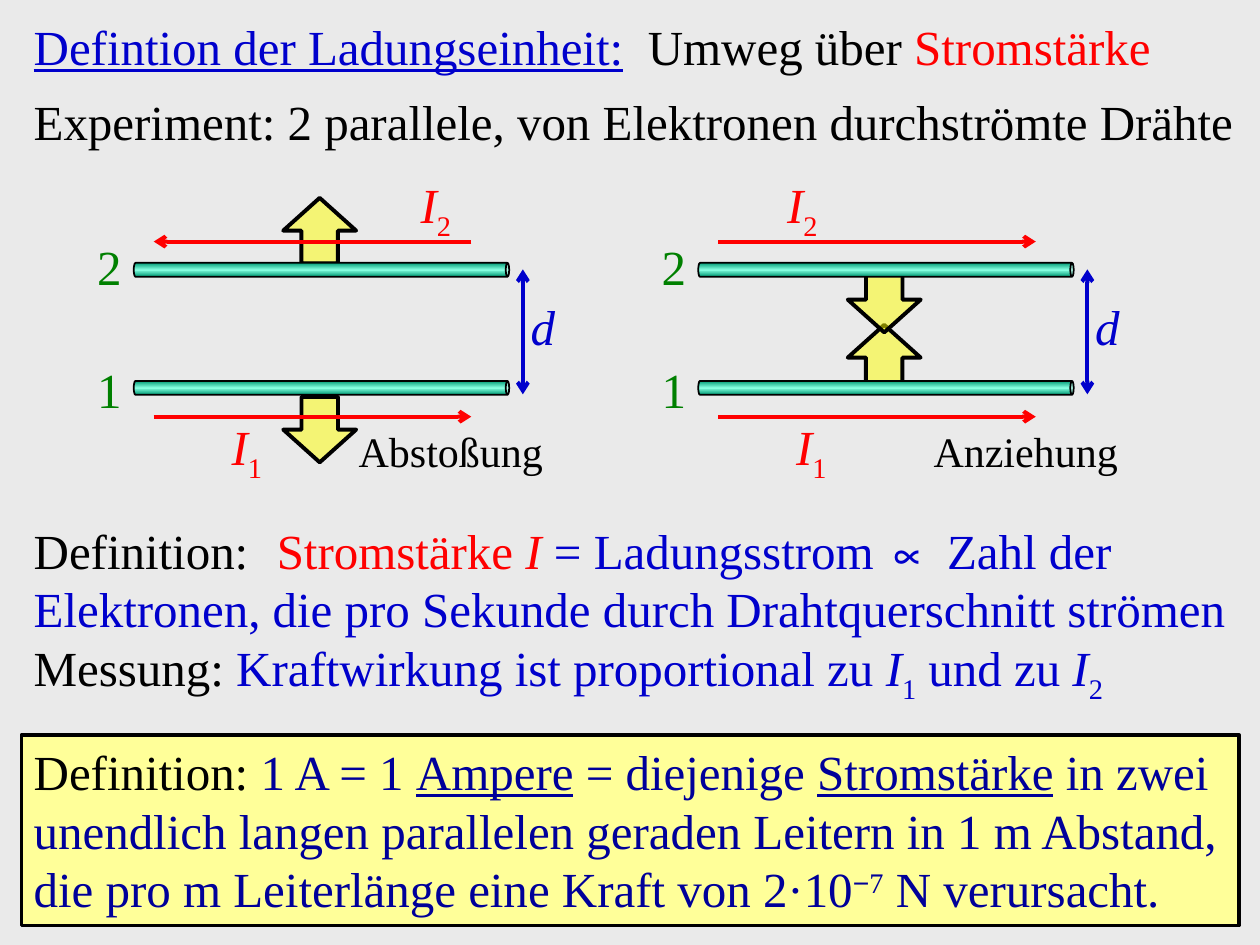
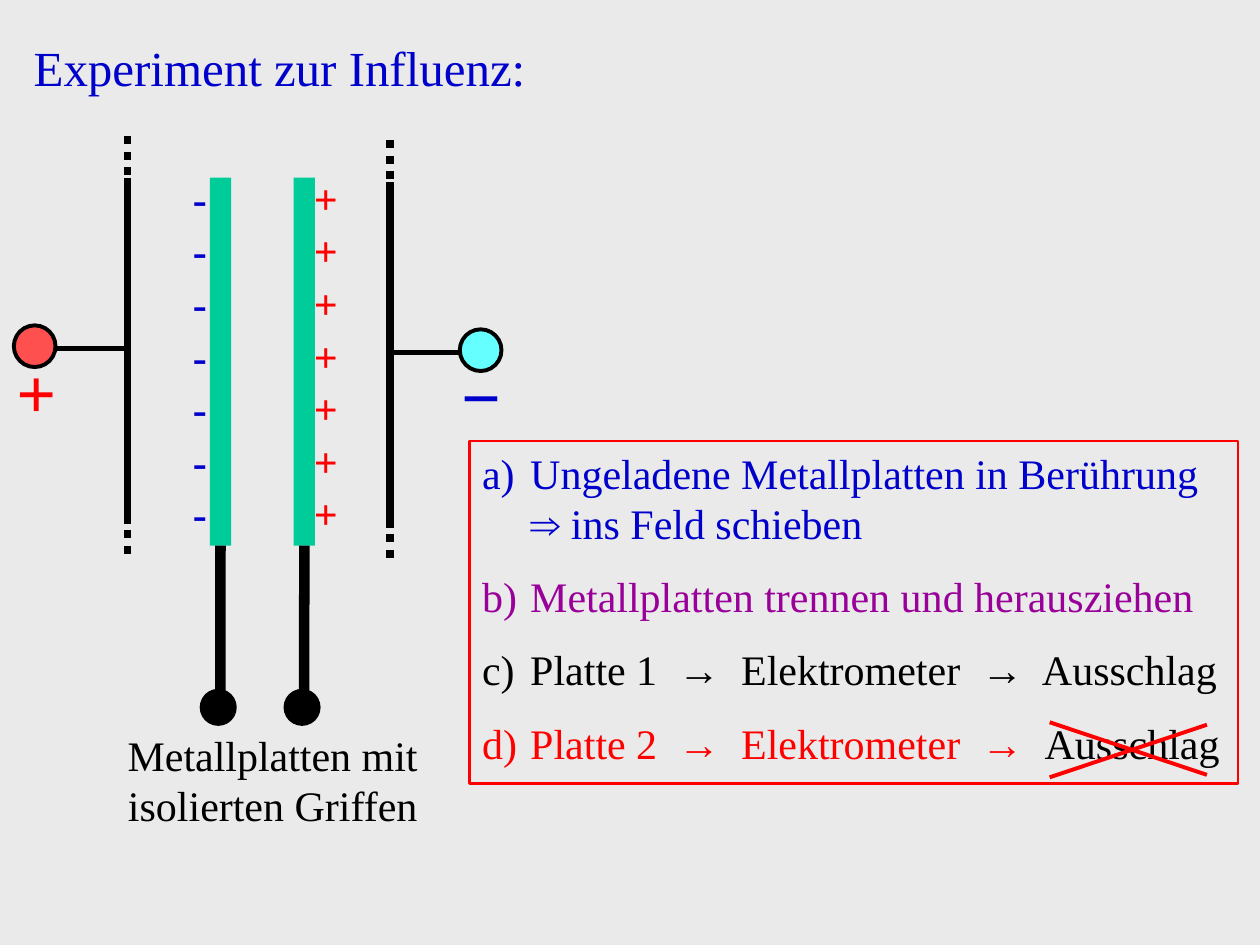
from copy import deepcopy

from lxml.etree import SubElement
from pptx import Presentation
from pptx.dml.color import RGBColor
from pptx.enum.dml import MSO_LINE
from pptx.enum.shapes import MSO_CONNECTOR, MSO_SHAPE
from pptx.enum.text import MSO_ANCHOR, MSO_AUTO_SIZE, PP_ALIGN
from pptx.oxml.ns import qn
from pptx.util import Cm, Pt

BACKGROUND = RGBColor(0xEA, 0xEA, 0xEA)
BLACK = RGBColor(0, 0, 0)
BLUE = RGBColor(0, 0, 0xCC)
NAVY = RGBColor(0, 0, 0x99)
RED = RGBColor(0xFF, 0, 0)
GREEN = RGBColor(0, 0x80, 0)
PURPLE = RGBColor(0x99, 0, 0x99)
YELLOW = RGBColor(0xFF, 0xFF, 0)
PALE_YELLOW = RGBColor(0xFF, 0xFF, 0x99)
PLATE_GREEN = RGBColor(0, 0xCC, 0x99)
ROD_EDGE = RGBColor(0, 0x99, 0x73)
ROD_SHINE = RGBColor(0x85, 0xFF, 0xE0)
CORAL = RGBColor(0xFF, 0x50, 0x50)
CYAN = RGBColor(0x66, 0xFF, 0xFF)

FONT = "Times New Roman"
MARGIN = 0.43
TEXT_WIDTH = 24.97
SYMBOL_BOX = (1.47, 1.45)


def new_slide(presentation):
    slide = presentation.slides.add_slide(presentation.slide_layouts[6])
    slide.background.fill.solid()
    slide.background.fill.fore_color.rgb = BACKGROUND
    return slide


def write(shape, paragraphs, size=28, centered=False):
    """Fill a shape with paragraphs, each a list of (text, colour, style words)."""
    frame = shape.text_frame
    frame.word_wrap = True
    frame.auto_size = MSO_AUTO_SIZE.SHAPE_TO_FIT_TEXT
    frame.vertical_anchor = MSO_ANCHOR.TOP
    for index, runs in enumerate(paragraphs):
        paragraph = frame.add_paragraph() if index else frame.paragraphs[0]
        paragraph.alignment = PP_ALIGN.CENTER if centered else PP_ALIGN.LEFT
        for text, color, *styles in runs:
            run = paragraph.add_run()
            run.text = text
            font = run.font
            font.name = "Arial" if "arial" in styles else FONT
            font.size = Pt(size)
            font.color.rgb = color
            font.bold = "bold" in styles
            font.italic = "italic" in styles
            font.underline = "underline" in styles
            if "sub" in styles:
                run._r.get_or_add_rPr().set("baseline", "-25000")
            if "super" in styles:
                run._r.get_or_add_rPr().set("baseline", "30000")
    return shape


def add_text(slide, left, top, width, height, paragraphs, size=28, centered=False):
    box = slide.shapes.add_textbox(Cm(left), Cm(top), Cm(width), Cm(height))
    return write(box, paragraphs, size, centered)


def add_symbol(slide, left, top, *runs):
    add_text(slide, left, top, *SYMBOL_BOX, [runs], centered=True)


def add_figure(slide, kind, left, top, width, height, fill=None, line=None, weight=2.25):
    shape = slide.shapes.add_shape(kind, Cm(left), Cm(top), Cm(width), Cm(height))
    shape.shadow.inherit = False
    if fill is None:
        shape.fill.background()
    else:
        shape.fill.solid()
        shape.fill.fore_color.rgb = fill
    if line is None:
        shape.line.fill.background()
    else:
        shape.line.color.rgb = line
        shape.line.width = Pt(weight)
    return shape


def add_line(slide, start, end, color, weight=2.25, arrows=(), dash=None):
    """Draw a line; arrows holds "head" for its start and "tail" for its end."""
    line = slide.shapes.add_connector(
        MSO_CONNECTOR.STRAIGHT, *(Cm(value) for value in (*start, *end)))
    line.line.color.rgb = color
    line.line.width = Pt(weight)
    if dash:
        line.line.dash_style = dash
    for end_name in arrows:
        SubElement(line.line._get_or_add_ln(), qn(f"a:{end_name}End"), type="arrow")
    SubElement(line._element.spPr, qn("a:effectLst"))
    return line


def add_rod(slide, center_x, center_y, length=7.57, thickness=0.28):
    rod = add_figure(slide, MSO_SHAPE.CAN, center_x - thickness / 2,
                     center_y - length / 2, thickness, length, ROD_EDGE, BLACK, 1)
    rod.rotation = 90
    rod.fill.gradient()
    rod.fill.gradient_angle = 0
    stop_list = rod._element.spPr.find(".//" + qn("a:gsLst"))
    stop_list.insert(1, deepcopy(stop_list[0]))
    colors = (ROD_EDGE, ROD_SHINE, ROD_EDGE)
    for stop, position, color in zip(rod.fill.gradient_stops, (0, 0.5, 1), colors):
        stop.position = position
        stop.color.rgb = color


def add_force(slide, left, top, rotation):
    force = add_figure(slide, MSO_SHAPE.UP_ARROW, left, top, 1.47, 1.32, YELLOW, BLACK)
    force.rotation = rotation
    color = force._element.spPr.find(qn("a:solidFill"))[0]
    SubElement(color, qn("a:alpha"), val="50000")


def draw_wire_pair(slide, left, top, caption, caption_left, current_2_left,
                   up_top, down_top, opposed):
    """Two parallel wires with currents, forces and their distance."""
    add_force(slide, left + 4.24, top + up_top, 0)
    add_force(slide, left + 4.24, top + down_top, 180)

    tail_x, tip_x = left + 1.63, left + 8.03
    add_line(slide, (tail_x, top + 5), (tip_x, top + 5), RED, arrows=["tail"])
    if opposed:
        tail_x, tip_x = tip_x, tail_x
    add_line(slide, (tail_x, top + 1.47), (tip_x, top + 1.47), RED, arrows=["tail"])
    add_line(slide, (left + 9.07, top + 4.55), (left + 9.07, top + 2.03), BLUE,
             arrows=["head", "tail"])

    currents = (("1", left + 2.77, top + 4.88), ("2", left + current_2_left, top))
    for number, x, y in currents:
        add_symbol(slide, x, y, ("I", RED, "italic"), (number, RED, "sub"))
    add_symbol(slide, left, top + 3.73, ("1", GREEN))
    add_symbol(slide, left, top + 1.24, ("2", GREEN))
    add_symbol(slide, left + 8.74, top + 2.46, ("d", BLUE, "italic"))
    add_text(slide, left + caption_left, top + 5.06, 5.36, 1.27,
             [[(caption, BLACK)]], size=24)
    for rod_y in (2.04, 4.42):
        add_rod(slide, left + 5.01, top + rod_y)


def build_ampere_slide(presentation):
    slide = new_slide(presentation)
    add_text(slide, MARGIN, 0.2, TEXT_WIDTH, 1.45, [[
        ("Defintion der Ladungseinheit:", BLUE, "underline"),
        ("  Umweg über ", BLACK), ("Stromstärke", RED)]])
    add_text(slide, MARGIN, 1.73, TEXT_WIDTH, 1.45, [[
        ("Experiment: 2 parallele, von Elektronen durchströmte Drähte", BLACK)]])

    draw_wire_pair(slide, 1.47, 3.4, "Abstoßung", 5.51, 6.58, 0.59, 4.6, opposed=True)
    draw_wire_pair(slide, 12.85, 3.4, "Anziehung", 5.72, 2.59, 3.15, 1.98, opposed=False)

    definition = add_text(slide, MARGIN, 10.36, TEXT_WIDTH, 3.84, [
        [("Definition:\t", BLACK), ("Stromstärke ", RED), ("I ", RED, "italic"),
         ("= Ladungsstrom ∝ Zahl der Elektronen, die pro Sekunde durch "
          "Drahtquerschnitt strömen", BLUE)],
        [("Messung: ", BLACK), ("Kraftwirkung ist proportional zu ", BLUE),
         ("I", BLUE, "italic"), ("1", BLUE, "sub"), (" und zu ", BLUE),
         ("I", BLUE, "italic"), ("2", BLUE, "sub")]])
    properties = definition.text_frame.paragraphs[0]._p.get_or_add_pPr()
    tabs = SubElement(properties, qn("a:tabLst"))
    SubElement(tabs, qn("a:tab"), pos=str(Cm(4.9)), algn="l")

    ampere_box = add_figure(slide, MSO_SHAPE.RECTANGLE, MARGIN, 14.82, 24.55, 3.84,
                            PALE_YELLOW, BLACK, 2)
    write(ampere_box, [[
        ("Definition: ", BLACK), ("1 A = 1 ", NAVY), ("Ampere", NAVY, "underline"),
        (" = diejenige ", NAVY), ("Stromstärke", NAVY, "underline"),
        (" in zwei unendlich langen parallelen geraden Leitern in 1 m Abstand, "
         "die pro m Leiterlänge eine Kraft von 2·10", NAVY),
        ("−", NAVY, "arial", "super"), ("7", NAVY, "super"), (" N verursacht.", NAVY)]])


def draw_electrode(slide, plate_x, top, ball_left, fill, sign, sign_left, sign_color):
    """A charged outer plate with its lead, ball and sign."""
    add_line(slide, (plate_x, top), (plate_x, top + 8.55), BLACK, 4.5,
             dash=MSO_LINE.ROUND_DOT)
    add_line(slide, (plate_x, top + 0.85), (plate_x, top + 7.83), BLACK, 4.5)
    lead_end = ball_left + (0.84 if ball_left < plate_x else 0)
    add_line(slide, (plate_x, top + 4.28), (lead_end, top + 4.28), BLACK, 3)
    add_figure(slide, MSO_SHAPE.OVAL, ball_left, top + 3.82, 0.84, 0.84, fill, BLACK)
    add_text(slide, sign_left, top + 4.17, 2.74, 1.96, [[(sign, sign_color, "bold")]],
             size=40, centered=True)


def draw_metal_plate(slide, left, top, sign, sign_left, sign_color):
    """A plate on an insulated handle with a column of induced charges."""
    plate = add_figure(slide, MSO_SHAPE.RECTANGLE, left, top, 0.43, 7.42, PLATE_GREEN)
    middle = left + 0.21
    handle = add_line(slide, (middle, top + 7.42), (middle, top + 10.57), BLACK, 6)
    handle.begin_connect(plate, 2)
    add_figure(slide, MSO_SHAPE.OVAL, left - 0.15, top + 10.36, 0.64, 0.64,
               BLACK, BLACK, 3)
    for row in range(7):
        add_text(slide, sign_left, top - 0.23 + 1.06 * row, 1.7, 1.27,
                 [[(sign, sign_color, "bold")]], size=24, centered=True)


def draw_steps(slide, left, top):
    box = add_figure(slide, MSO_SHAPE.RECTANGLE, left, top, 15.49, 6.91, None, RED, 1.5)
    write(box, [
        [("Ungeladene Metallplatten in Berührung ⇒ ins Feld schieben", BLUE)],
        [("Metallplatten trennen und herausziehen", PURPLE)],
        [("Platte 1  →  Elektrometer  →  Ausschlag", BLACK)],
        [("Platte 2  →  Elektrometer  →  ", RED), ("Ausschlag", BLACK)]], size=24)
    for index, paragraph in enumerate(box.text_frame.paragraphs):
        if index:
            paragraph.space_before = Pt(13)
        properties = paragraph._p.get_or_add_pPr()
        properties.set("marL", str(Cm(0.97)))
        properties.set("indent", str(-Cm(0.97)))
        SubElement(properties, qn("a:buFont"), typeface=FONT)
        SubElement(properties, qn("a:buAutoNum"), type="alphaLcParenR")
    cross_left, cross_right = left + 11.69, left + 14.86
    add_line(slide, (cross_left, top + 6.78), (cross_right, top + 5.72), RED)
    add_line(slide, (cross_left, top + 5.67), (cross_right, top + 6.73), RED)


def build_induction_slide(presentation):
    slide = new_slide(presentation)
    add_text(slide, MARGIN, 0.64, 20.96, 1.45, [[("Experiment zur Influenz:", BLUE)]])
    draw_electrode(slide, 2.57, 2.74, 0.28, CORAL, "+", -0.64, RED)
    draw_electrode(slide, 7.87, 2.82, 9.27, CYAN, "−", 8.33, BLUE)
    draw_metal_plate(slide, 4.23, 3.58, "-", 3.18, BLUE)
    draw_metal_plate(slide, 5.92, 3.58, "+", 5.72, RED)
    add_text(slide, 2.11, 14.58, 6.78, 2.29,
             [[("Metallplatten mit isolierten Griffen", BLACK)]], size=24, centered=True)
    draw_steps(slide, 9.47, 8.89)


def main():
    presentation = Presentation()
    presentation.slide_width = Cm(25.4)
    presentation.slide_height = Cm(19.05)
    build_ampere_slide(presentation)
    build_induction_slide(presentation)
    presentation.save("out.pptx")


if __name__ == "__main__":
    main()
